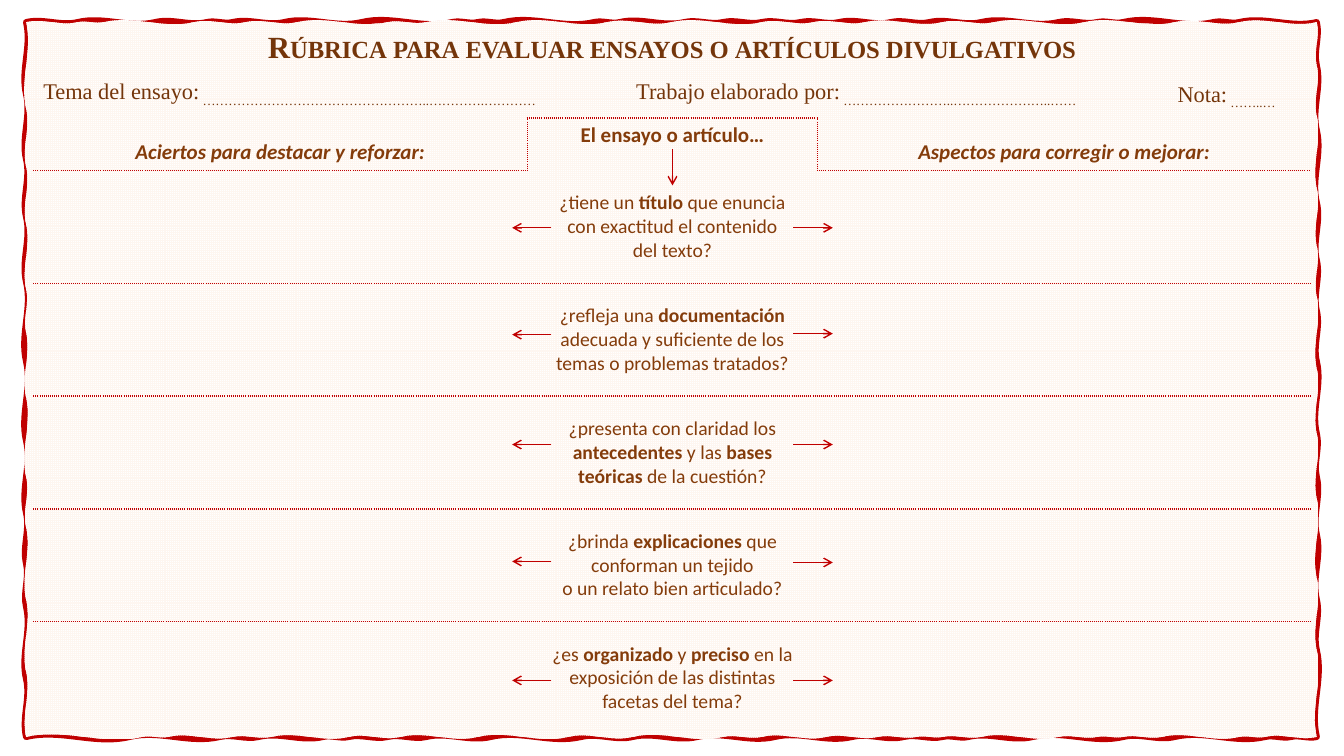
from lxml import etree
from pptx import Presentation
from pptx import util as u
from pptx.dml.color import RGBColor
from pptx.enum import dml, shapes, text
from pptx.oxml.ns import qn

RED = RGBColor(0xC0, 0x00, 0x00)
BROWN = RGBColor(0x74, 0x35, 0x0A)
RUST = RGBColor(0x84, 0x3C, 0x0B)
CREAM = RGBColor(0xFE, 0xF6, 0xF0)
WHITE = RGBColor(0xFF, 0xFF, 0xFF)

TITLE = dict(size=u.Pt(22), name="Times New Roman", bold=True)
FIELD = dict(size=u.Pt(16), name="Times New Roman", bold=False)
HEADING = dict(size=u.Pt(15), name="Calibri", bold=True)
QUESTION = dict(size=u.Pt(14), name="Calibri", bold=False)

# Relative wave lengths along the top, right, bottom and left edges
BORDER_WAVES = [
    [4, 6, 4, 2, 4, 6, 7, 2, 2, 7, 2, 5, 3, 3, 3, 3, 4, 3, 4, 6, 3, 2, 7, 2, 6],
    [6, 9, 10, 8, 7, 7, 10, 6, 8, 9, 7, 12],
    [2, 2, 7, 4, 7, 5, 2, 3, 4, 6, 6, 5, 4, 7, 5, 3, 3, 2, 5, 3, 7, 8],
    [8, 10, 6, 7, 10, 11, 11, 9, 8, 9, 10],
]
SHEET_WAVES = [
    [4, 2, 7, 4, 4, 7, 3, 7, 7, 5, 7, 4, 4, 6, 4, 7, 7, 5, 6],
    [6, 7, 10, 8, 7, 10, 9, 9, 11, 10, 12],
    [4, 2, 6, 3, 2, 3, 6, 3, 2, 3, 4, 5, 3, 7, 5, 7, 6, 4, 6, 3, 5, 2, 9],
    [9, 10, 10, 7, 11, 9, 6, 9, 8, 8, 12],
]

COLUMNS = [4.9, 0.98, 1.9, 3.47, 1.42]
ROWS = [0.45, 0.43, 0.52] + [1.12] * 5

# First column, last column, label, dotted blank
FIELDS = [
    (0, 1, "Tema del ensayo:", "……………………………………………..………….…………"),
    (2, 3, "Trabajo elaborado por:", "……………………..…………………..……"),
    (4, 4, "Nota:", "……..…"),
]
# First column, last column, text, italic, anchor, borders
HEADINGS = [
    (0, 0, "Aciertos para destacar y reforzar:", True, text.MSO_ANCHOR.BOTTOM, "RB"),
    (1, 2, "El ensayo o artículo…", False, text.MSO_ANCHOR.TOP, "LTR"),
    (3, 4, "Aspectos para corregir o mejorar:", True, text.MSO_ANCHOR.BOTTOM, "LB"),
]
# Bold words stand between double asterisks
QUESTIONS = [
    "¿tiene un **título** que enuncia\ncon exactitud el contenido\ndel texto?",
    "¿refleja una **documentación** adecuada y suficiente de los temas o problemas tratados?",
    "¿presenta con claridad los **antecedentes** y las **bases\nteóricas** de la cuestión?",
    "¿brinda **explicaciones** que conforman un tejido\no un relato bien articulado?",
    "¿es **organizado** y **preciso** en la exposición de las distintas\nfacetas del tema?",
]
# Heights of the arrows to the left and to the right
ARROW_HEIGHTS = {-1: [2.26, 3.32, 4.41, 5.57, 6.75], 1: [2.26, 3.31, 4.41, 5.58, 6.75]}


def add_run(p, words, color, fmt):
    r = p.add_run()
    r.text = words
    for key, value in fmt.items():
        setattr(r.font, key, value)
    r.font.color.rgb = color
    return r


def add_rich(p, words, color, fmt):
    for i, part in enumerate(words.split("**")):
        for j, line in enumerate(part.split("\n")):
            if j:
                p.add_line_break()
            if line:
                add_run(p, line, color, {**fmt, "bold": i % 2 == 1})


def set_borders(cell, sides):
    tcPr = cell._tc.get_or_add_tcPr()
    for side in "LRTB":
        ln = etree.SubElement(tcPr, qn("a:ln" + side), w=str(u.Pt(1)))
        if side in sides:
            fill = etree.SubElement(ln, qn("a:solidFill"))
            etree.SubElement(fill, qn("a:srgbClr"), val=str(RED))
            etree.SubElement(ln, qn("a:prstDash"), val="sysDot")
        else:
            etree.SubElement(ln, qn("a:noFill"))
    cell.fill.background()


def block(tbl, row, first, last, sides="", anchor=text.MSO_ANCHOR.TOP,
          align=text.PP_ALIGN.LEFT):
    """Join the cells first..last of a row and return their paragraph."""
    for c in range(first, last + 1):
        inner = ("L" if c > first else "") + ("R" if c < last else "")
        set_borders(tbl.cell(row, c), set(sides) - set(inner))
    cell = tbl.cell(row, first)
    if last > first:
        cell.merge(tbl.cell(row, last))
    cell.vertical_anchor = anchor
    p = cell.text_frame.paragraphs[0]
    p.alignment = align
    return p


def add_wavy_path(paths, w, h, waves, **attrs):
    """Trace a box clockwise; each wave swings outward, then inward."""
    outline = etree.SubElement(paths, qn("a:path"), w=str(u.Inches(w)),
                               h=str(u.Inches(h)), **attrs)

    def add(tag, *points):
        node = etree.SubElement(outline, qn(tag))
        for px, py in points:
            etree.SubElement(node, qn("a:pt"), x=str(u.Inches(px)), y=str(u.Inches(py)))

    add("a:moveTo", (0, 0))
    edges = [(0, 0, 1, 0, w), (w, 0, 0, 1, h), (w, h, -1, 0, w), (0, h, 0, -1, h)]
    for (x, y, dx, dy, length), parts in zip(edges, waves):
        unit, start = length / sum(parts), 0
        for part in parts:
            step = part * unit
            swing = min(0.09, 0.08 * step)
            curve = [(1 / 3, swing), (2 / 3, -swing), (1, 0)]
            add("a:cubicBezTo", *[(x + dx * (start + f * step) + dy * out,
                                   y + dy * (start + f * step) - dx * out)
                                  for f, out in curve])
            start += step
    etree.SubElement(outline, qn("a:close"))


def frame(s, x, y, w, h):
    # Hand-drawn border around a patterned sheet
    fb = s.shapes.build_freeform(u.Inches(x), u.Inches(y), scale=1.0)
    corners = [(x + w, y), (x + w, y + h), (x, y + h)]
    fb.add_line_segments([(u.Inches(a), u.Inches(b)) for a, b in corners])
    sp = fb.convert_to_shape()
    sp.shadow.inherit = False
    paths = sp._element.spPr.find(".//" + qn("a:pathLst"))
    paths.remove(paths[0])
    add_wavy_path(paths, w, h, BORDER_WAVES, fill="none")
    add_wavy_path(paths, w, h, SHEET_WAVES, stroke="0")
    sp.fill.patterned()
    sp.fill.pattern = dml.MSO_PATTERN.SMALL_GRID
    sp.fill.fore_color.rgb = CREAM
    sp.fill.back_color.rgb = WHITE
    sp.line.color.rgb = RED
    sp.line.width = u.Pt(4.5)


def rubric(s, x, y, w, h):
    tbl = s.shapes.add_table(len(ROWS), len(COLUMNS), *map(u.Inches, (x, y, w, h))).table
    tbl.first_row = tbl.horz_banding = False
    for column, width in zip(tbl.columns, COLUMNS):
        column.width = u.Inches(width)
    for row, height in zip(tbl.rows, ROWS):
        row.height = u.Inches(height)
    center, middle = text.PP_ALIGN.CENTER, text.MSO_ANCHOR.MIDDLE

    # Title
    p = block(tbl, 0, 0, 4, align=center)
    p.line_spacing, p.space_after = 0.9, u.Pt(6)
    r = add_run(p, "Rúbrica para evaluar ensayos o artículos divulgativos", BROWN, TITLE)
    r.font._element.set("cap", "small")

    # Fields to fill in
    for first, last, label, dots in FIELDS:
        p = block(tbl, 1, first, last, anchor=middle if first == 4 else text.MSO_ANCHOR.TOP)
        add_run(p, label, BROWN, FIELD)
        add_run(p, " ", BROWN, {**FIELD, "size": u.Pt(9)})
        add_run(p, dots, BROWN, FIELD).font._element.set("baseline", "-25000")

    # Column headings
    for first, last, words, italic, anchor, sides in HEADINGS:
        p = block(tbl, 2, first, last, sides, anchor, center)
        add_run(p, words, RUST, {**HEADING, "italic": italic})

    # Questions, with blank cells on both sides
    for row, question in enumerate(QUESTIONS, 3):
        below = "B" if row < len(ROWS) - 1 else ""
        above = "T" if row > 3 else ""
        block(tbl, row, 0, 0, "T" + below)
        p = block(tbl, row, 1, 2, above + below, middle, center)
        add_rich(p, question, RUST, QUESTION)
        block(tbl, row, 3, 4, "T" + below)


def arrow(s, x1, y1, x2, y2):
    cx = s.shapes.add_connector(shapes.MSO_CONNECTOR.STRAIGHT,
                                *map(u.Inches, (x1, y1, x2, y2)))
    cx.line.color.rgb = RED
    cx.line.width = u.Pt(1)
    etree.SubElement(cx.line._get_or_add_ln(), qn("a:tailEnd"), type="arrow")
    etree.SubElement(cx._element.spPr, qn("a:effectLst"))


def arrows(s, middle, top):
    arrow(s, middle, top, middle, top + 0.36)
    for side, heights in ARROW_HEIGHTS.items():
        for y in heights:
            arrow(s, middle + side * 1.2, y, middle + side * 1.59, y)


def main():
    prs = Presentation()
    prs.slide_width, prs.slide_height = u.Inches(13.33), u.Inches(7.5)
    s = prs.slides.add_slide(prs.slide_layouts[6])
    frame(s, 0.26, 0.22, 12.8, 7.09)
    rubric(s, 0.33, 0.29, sum(COLUMNS), sum(ROWS))
    arrows(s, 6.67, 1.48)
    prs.save("out.pptx")


if __name__ == "__main__":
    main()
